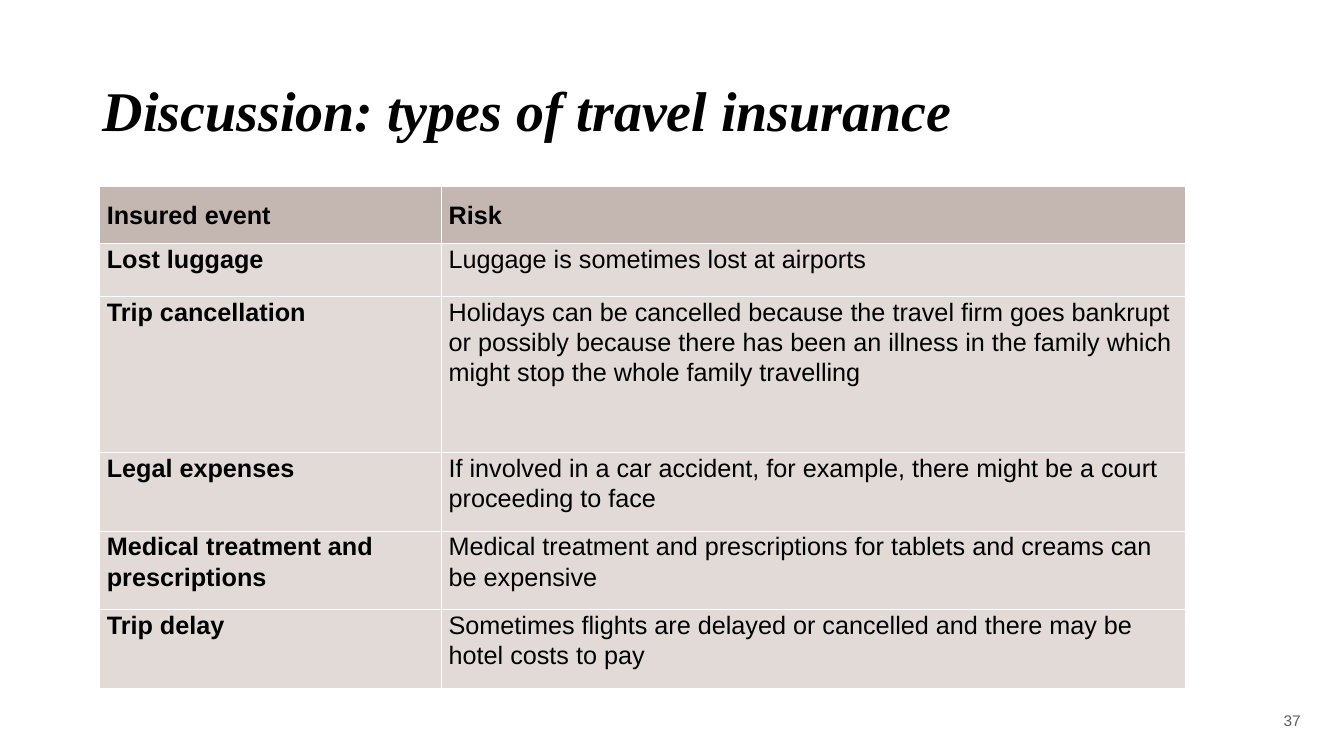
from lxml import etree
from pptx import Presentation
from pptx.dml.color import RGBColor
from pptx.enum.text import MSO_ANCHOR, MSO_AUTO_SIZE, PP_ALIGN
from pptx.oxml.ns import qn
from pptx.util import Inches, Pt

LEFT, RIGHT = PP_ALIGN.LEFT, PP_ALIGN.RIGHT
TOP, MIDDLE = MSO_ANCHOR.TOP, MSO_ANCHOR.MIDDLE
NO_FIT = MSO_AUTO_SIZE.NONE

WIDTHS = [3.39, 7.38]
HEIGHTS = [0.57, 0.52, 1.55, 0.78, 0.78, 0.78]
ROWS = [
    ("Insured event", "Risk"),
    ("Lost luggage", "Luggage is sometimes lost at airports"),
    ("Trip cancellation",
     "Holidays can be cancelled because the travel firm goes bankrupt or possibly "
     "because there has been an illness in the family which might stop the whole "
     "family travelling"),
    ("Legal expenses",
     "If involved in a car accident, for example, there might be a court "
     "proceeding to face"),
    ("Medical treatment and prescriptions",
     "Medical treatment and prescriptions for tablets and creams can be expensive"),
    ("Trip delay",
     "Sometimes flights are delayed or cancelled and there may be hotel costs to pay"),
]


def color(code):
    return RGBColor.from_string(code)


class Deck:
    face = "Arial"
    serif = "Times New Roman"
    ink = "000000"
    gray = "5E5E5E"
    tint = "C4B6B1"
    rule = "FFFFFF"

    def __init__(self):
        self.show = Presentation()
        self.show.slide_width = Inches(13.33)
        self.show.slide_height = Inches(7.5)
        self.slide = self.show.slides.add_slide(self.show.slide_layouts[5])

    def label(self, frame, text, size, tone, face=face, bold=False,
              italic=False, align=LEFT, space=1.0):
        frame.text = text
        frame.word_wrap = True
        para = frame.paragraphs[0]
        para.alignment = align
        para.line_spacing = space
        font = para.font
        font.name, font.size = face, Pt(size)
        font.bold, font.italic = bold, italic
        font.color.rgb = color(tone)

    def title(self, text, left, top, width, height):
        shape = self.slide.shapes.title
        shape.left, shape.top = Inches(left), Inches(top)
        shape.width, shape.height = Inches(width), Inches(height)
        frame = shape.text_frame
        frame.auto_size = NO_FIT
        frame.vertical_anchor = MIDDLE
        self.label(frame, text, 40, self.ink, self.serif, True, True, space=0.9)

    def number(self, text, left, top, width, height):
        box = self.slide.shapes.add_textbox(
            Inches(left), Inches(top), Inches(width), Inches(height))
        frame = box.text_frame
        frame.vertical_anchor = MIDDLE
        self.label(frame, text, 11, self.gray, align=RIGHT)

    def border(self, cell):
        props = cell._tc.get_or_add_tcPr()
        for side in ("a:lnL", "a:lnR", "a:lnT", "a:lnB"):
            line = etree.SubElement(props, qn(side), w=str(Pt(1)))
            fill = etree.SubElement(line, qn("a:solidFill"))
            etree.SubElement(fill, qn("a:srgbClr"), val=self.rule)

    def cell(self, cell, text, head, bold):
        cell.margin_left = cell.margin_right = Inches(0.07)
        cell.margin_top = cell.margin_bottom = 0
        cell.vertical_anchor = MIDDLE if head else TOP
        self.label(cell.text_frame, text, 18, self.ink, bold=bold, space=1.07)
        self.border(cell)
        cell.fill.solid()
        cell.fill.fore_color.rgb = color(self.tint)
        if not head:
            shade = cell._tc.tcPr.find(qn("a:solidFill"))[0]
            etree.SubElement(shade, qn("a:alpha"), val="50000")

    def table(self, rows, widths, heights, left, top):
        table = self.slide.shapes.add_table(
            len(rows), len(widths), Inches(left), Inches(top),
            Inches(sum(widths)), Inches(sum(heights))).table
        table.horz_banding = False
        for col, width in zip(table.columns, widths):
            col.width = Inches(width)
        for r, (row, height) in enumerate(zip(rows, heights)):
            table.rows[r].height = Inches(height)
            for c, text in enumerate(row):
                head = r == 0
                self.cell(table.cell(r, c), text, head, head or c == 0)


def main():
    deck = Deck()
    deck.number("37", 12.27, 6.95, 0.73, 0.4)
    deck.title("Discussion: types of travel insurance", 0.92, 0.4, 11.96, 1.45)
    deck.table(ROWS, WIDTHS, HEIGHTS, 0.99, 1.85)
    deck.show.save("out.pptx")


if __name__ == "__main__":
    main()
